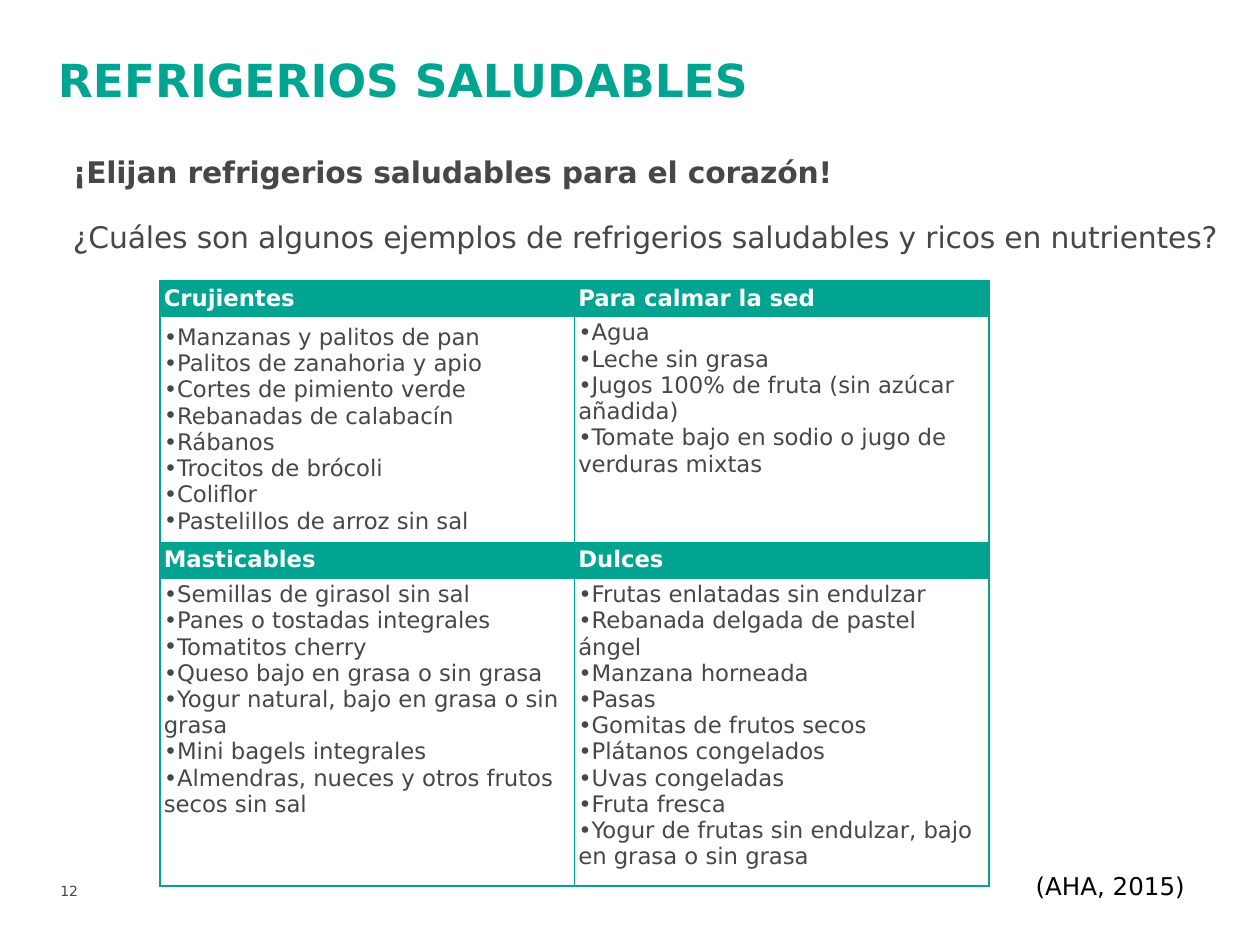
from dataclasses import dataclass

from lxml import etree
from pptx import Presentation
from pptx import util as u
from pptx.dml.color import RGBColor
from pptx.enum import text as t
from pptx.oxml.ns import qn


@dataclass(frozen=True)
class Theme:
    font: str = "DejaVu Sans"
    accent: str = "01A490"
    body: str = "464847"
    black: str = "000000"
    white: str = "FFFFFF"
    title_size: int = 26
    lead_size: int = 17
    citation_size: int = 14
    table_size: int = 13
    number_size: int = 8
    cell_inset: float = 0.03


class SlideBuilder:
    def __init__(self, slide, theme):
        self.slide = slide
        self.theme = theme

    def add_run(self, paragraph, words, size, color, bold=False):
        run = paragraph.add_run()
        run.text = words
        run.font.name = self.theme.font
        run.font.size = u.Pt(size)
        run.font.bold = bold
        run.font.color.rgb = RGBColor.from_string(color)
        return run

    def title(self, words, left, top, width, height):
        shape = self.slide.shapes.title
        shape.left, shape.top = u.Inches(left), u.Inches(top)
        shape.width, shape.height = u.Inches(width), u.Inches(height)
        frame = shape.text_frame
        frame.auto_size = t.MSO_AUTO_SIZE.NONE
        frame.vertical_anchor = t.MSO_ANCHOR.TOP
        paragraph = frame.paragraphs[0]
        paragraph.alignment = t.PP_ALIGN.LEFT
        self.add_run(paragraph, words, self.theme.title_size, self.theme.accent, True)

    def text_frame(self, left, top, width, height, anchor=t.MSO_ANCHOR.TOP):
        box = self.slide.shapes.add_textbox(
            u.Inches(left), u.Inches(top), u.Inches(width), u.Inches(height))
        frame = box.text_frame
        frame.word_wrap = True
        frame.vertical_anchor = anchor
        return frame

    def label(self, words, left, top, width, height, size, color):
        frame = self.text_frame(left, top, width, height, t.MSO_ANCHOR.MIDDLE)
        self.add_run(frame.paragraphs[0], words, size, color)

    def lead(self, heading, question, left, top, width, height):
        size = self.theme.lead_size
        frame = self.text_frame(left, top, width, height)
        first = frame.paragraphs[0]
        first.space_after = u.Pt(size)
        for paragraph, words, bold in ((first, heading, True),
                                       (frame.add_paragraph(), question, False)):
            run = self.add_run(paragraph, words, size, self.theme.body, bold)
            run.font._element.set("spc", "-10")

    def table(self, left, top, column_widths, row_heights):
        frame = self.slide.shapes.add_table(
            len(row_heights), len(column_widths), u.Inches(left), u.Inches(top),
            u.Inches(sum(column_widths)), u.Inches(sum(row_heights)))
        table = frame.table
        table.first_row = table.horz_banding = False
        for column, width in zip(table.columns, column_widths):
            column.width = u.Inches(width)
        for row, height in zip(table.rows, row_heights):
            row.height = u.Inches(height)
        return table

    def format_cell(self, cell, anchor):
        inset = u.Inches(self.theme.cell_inset)
        cell.margin_left = cell.margin_right = inset
        cell.margin_top = cell.margin_bottom = inset
        cell.vertical_anchor = anchor
        # Borders come before the fill in the cell properties
        properties = cell._tc.get_or_add_tcPr()
        for side in ("a:lnL", "a:lnR", "a:lnT", "a:lnB"):
            line = etree.SubElement(properties, qn(side), w=str(u.Pt(1)))
            fill = etree.SubElement(line, qn("a:solidFill"))
            etree.SubElement(fill, qn("a:srgbClr"), val=self.theme.accent)

    def header_cell(self, cell, words):
        self.format_cell(cell, t.MSO_ANCHOR.MIDDLE)
        cell.fill.solid()
        cell.fill.fore_color.rgb = RGBColor.from_string(self.theme.accent)
        self.add_run(cell.text_frame.paragraphs[0], words,
                     self.theme.table_size, self.theme.white, True)

    def list_cell(self, cell, items, anchor):
        self.format_cell(cell, anchor)
        cell.fill.background()
        frame = cell.text_frame
        for index, item in enumerate(items):
            paragraph = frame.add_paragraph() if index else frame.paragraphs[0]
            properties = paragraph._p.get_or_add_pPr()
            etree.SubElement(properties, qn("a:buFont"), typeface=self.theme.font)
            etree.SubElement(properties, qn("a:buChar"), char="•")
            self.add_run(paragraph, item, self.theme.table_size, self.theme.body)


# Each band of the table is a pair of (heading, anchor, items)
TOP, MIDDLE = t.MSO_ANCHOR.TOP, t.MSO_ANCHOR.MIDDLE
SNACKS = [
    [
        ("Crujientes", MIDDLE, [
            "Manzanas y palitos de pan", "Palitos de zanahoria y apio",
            "Cortes de pimiento verde", "Rebanadas de calabacín", "Rábanos",
            "Trocitos de brócoli", "Coliflor", "Pastelillos de arroz sin sal"]),
        ("Para calmar la sed", TOP, [
            "Agua", "Leche sin grasa", "Jugos 100% de fruta (sin azúcar añadida)",
            "Tomate bajo en sodio o jugo de verduras mixtas"]),
    ],
    [
        ("Masticables", TOP, [
            "Semillas de girasol sin sal", "Panes o tostadas integrales",
            "Tomatitos cherry", "Queso bajo en grasa o sin grasa",
            "Yogur natural, bajo en grasa o sin grasa", "Mini bagels integrales",
            "Almendras, nueces y otros frutos secos sin sal"]),
        ("Dulces", TOP, [
            "Frutas enlatadas sin endulzar", "Rebanada delgada de pastel ángel",
            "Manzana horneada", "Pasas", "Gomitas de frutos secos",
            "Plátanos congelados", "Uvas congeladas", "Fruta fresca",
            "Yogur de frutas sin endulzar, bajo en grasa o sin grasa"]),
    ],
]


def main():
    presentation = Presentation()
    presentation.slide_width, presentation.slide_height = u.Inches(10), u.Inches(7.5)
    theme = Theme()
    slide = presentation.slides.add_slide(presentation.slide_layouts[5])
    builder = SlideBuilder(slide, theme)

    # Title and introduction
    builder.title("REFRIGERIOS SALUDABLES", 0.36, 0.36, 9.16, 0.92)
    builder.lead(
        "¡Elijan refrigerios saludables para el corazón!",
        "¿Cuáles son algunos ejemplos de refrigerios saludables y ricos en nutrientes?",
        0.48, 1.17, 9.42, 1)

    # Snack table: a heading row and a list row for each band
    table = builder.table(1.27, 2.23, [3.29, 3.29], [0.28, 1.79, 0.28, 2.36])
    for band, groups in enumerate(SNACKS):
        for column, (heading, anchor, items) in enumerate(groups):
            builder.header_cell(table.cell(2 * band, column), heading)
            builder.list_cell(table.cell(2 * band + 1, column), items, anchor)

    # Footer: slide number and citation
    builder.label("12", 0.38, 6.95, 0.45, 0.24, theme.number_size, theme.body)
    builder.label("(AHA, 2015)", 8.12, 6.86, 1.49, 0.34,
                  theme.citation_size, theme.black)

    presentation.save("out.pptx")


if __name__ == "__main__":
    main()
